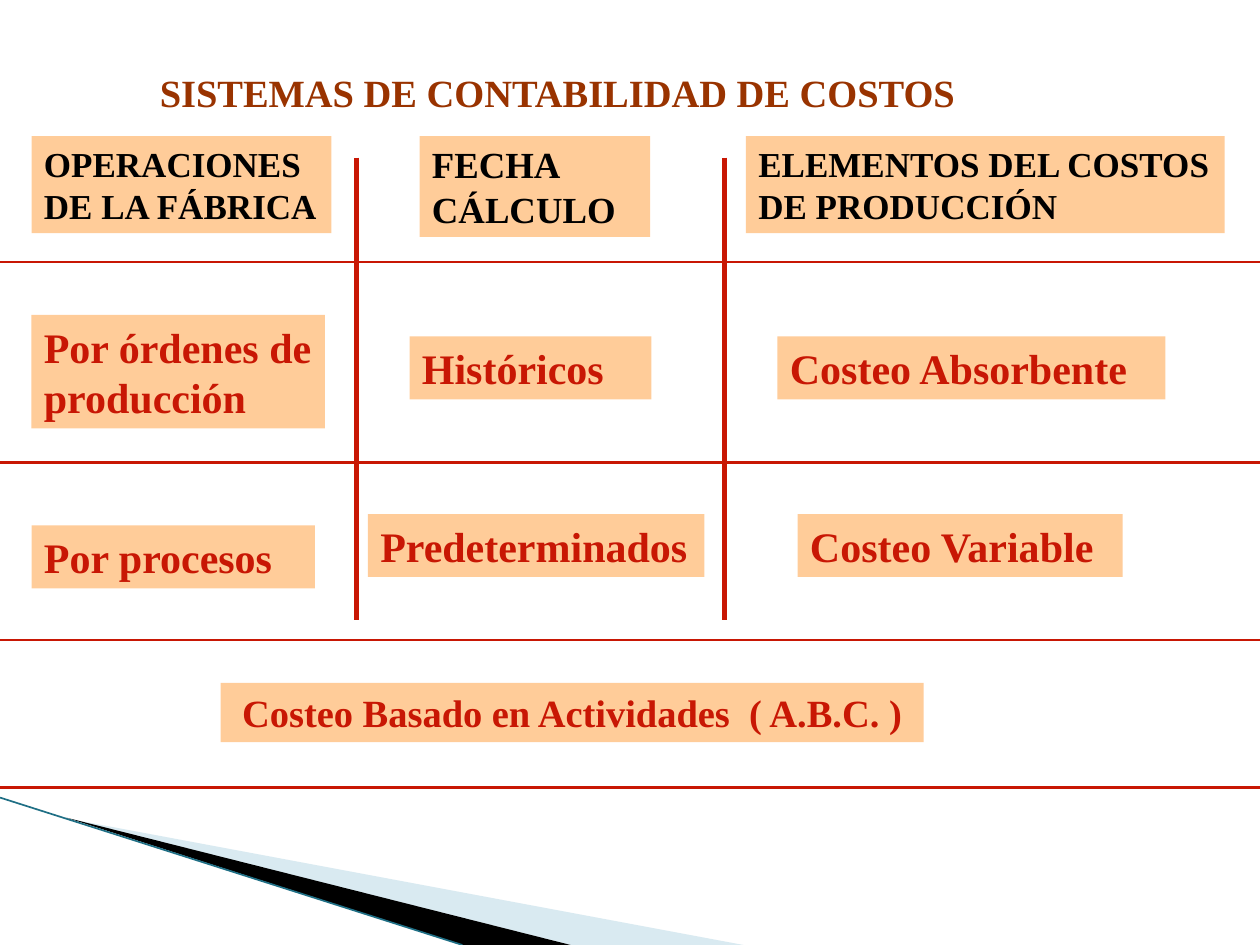
from lxml import etree
from pptx import Presentation
from pptx.dml.color import RGBColor
from pptx.enum.shapes import MSO_CONNECTOR, MSO_SHAPE
from pptx.enum.text import MSO_ANCHOR, PP_ALIGN
from pptx.oxml.ns import qn
from pptx.util import Inches, Pt

RECTANGLE = MSO_SHAPE.RECTANGLE
STRAIGHT = MSO_CONNECTOR.STRAIGHT
TOP = MSO_ANCHOR.TOP
LEFT, CENTER = PP_ALIGN.LEFT, PP_ALIGN.CENTER
FONT = "Times New Roman"
PEACH, RED, BLACK, BROWN = "FFCC99", "C81704", "000000", "993300"
PALE_BLUE, TEAL = "A0CBDC", "1F6F85"

HEADINGS = [
    (0.25, 2.38, 0.77, 20, ["OPERACIONES", "DE LA FÁBRICA"], True),
    (3.33, 1.83, 0.8, 21, ["FECHA CÁLCULO"], True),
    (5.92, 3.8, 0.77, 20, ["ELEMENTOS DEL COSTOS", "DE PRODUCCIÓN"], False),
]
SYSTEMS = [
    (0.25, 2.5, 2.33, 0.9, "Por órdenes de producción"),
    (0.25, 4.17, 2.25, 0.5, "Por procesos"),
    (3.25, 2.67, 1.92, 0.5, "Históricos"),
    (2.92, 4.08, 2.67, 0.5, "Predeterminados"),
    (6.17, 2.67, 3.08, 0.5, "Costeo Absorbente"),
    (6.33, 4.08, 2.58, 0.5, "Costeo Variable"),
]
COLUMN_RULES = [2.83, 5.75]
ROW_RULES = [2.08, 3.67, 5.08, 6.25]


def color(value):
    """Return the RGB colour of a hex string."""
    return RGBColor.from_string(value)


def write(box, lines, size, ink, align=LEFT, wrap=True):
    """Write bold lines in a box, one paragraph each."""
    frame = box.text_frame
    frame.word_wrap = wrap
    frame.vertical_anchor = TOP
    for index, line in enumerate(lines):
        para = frame.add_paragraph() if index else frame.paragraphs[0]
        para.alignment = align
        span = para.add_run()
        span.text = line
        formats = {"name": FONT, "size": Pt(size), "bold": True}
        for name, value in formats.items():
            setattr(span.font, name, value)
        span.font.color.rgb = color(ink)


def paint(shape, fill):
    """Give a shape a plain fill with no line or shadow."""
    shape.shadow.inherit = False
    shape.fill.solid()
    shape.fill.fore_color.rgb = color(fill)
    shape.line.fill.background()


def add_label(page, place, lines, size, ink, align=LEFT, wrap=True):
    """Add a peach rectangle with text."""
    box = page.shapes.add_shape(RECTANGLE, *map(Inches, place))
    paint(box, PEACH)
    write(box, lines, size, ink, align, wrap)


def add_rule(page, start, end, ink, width):
    """Add a straight line between two points."""
    rule = page.shapes.add_connector(STRAIGHT, *map(Inches, start + end))
    rule.line.color.rgb = color(ink)
    rule.line.width = Pt(width)
    etree.SubElement(rule._element.spPr, qn("a:effectLst"))


def add_wedge(page, points, fill, opacity=100):
    """Add a filled polygon with the given opacity in percent."""
    corners = [(Inches(x), Inches(y)) for x, y in points]
    builder = page.shapes.build_freeform(*corners[0])
    builder.add_line_segments(corners[1:], close=True)
    wedge = builder.convert_to_shape()
    paint(wedge, fill)
    if opacity < 100:
        tone = wedge._element.spPr.find(qn("a:solidFill"))[0]
        etree.SubElement(tone, qn("a:alpha"), val=str(opacity * 1000))


def main():
    """Build the slide and save it."""
    deck = Presentation()
    deck.slide_width, deck.slide_height = Inches(10), Inches(7.5)
    page = deck.slides.add_slide(deck.slide_layouts[6])

    add_wedge(page, [(0.55, 6.5), (5.9, 7.5), (4.53, 7.5)], PALE_BLUE, 40)
    add_wedge(page, [(0.53, 6.49), (4.53, 7.5), (3.67, 7.5)], BLACK)
    add_rule(page, (0, 6.33), (3.67, 7.5), TEAL, 0.95)

    title = page.shapes.add_textbox(*map(Inches, (1.17, 0.5, 6.54, 0.47)))
    write(title, ["SISTEMAS DE CONTABILIDAD DE COSTOS"], 22, BROWN, wrap=False)

    for left, width, height, size, lines, wrap in HEADINGS:
        place = (left, 1.08, width, height)
        add_label(page, place, lines, size, BLACK, wrap=wrap)
    for *place, name in SYSTEMS:
        add_label(page, place, [name], 24, RED)
    for x in COLUMN_RULES:
        add_rule(page, (x, 1.25), (x, 4.92), RED, 3)
    for y in ROW_RULES:
        add_rule(page, (0, y), (10, y), RED, 1.5)
    add_label(page, (1.75, 5.42, 5.58, 0.47),
              ["Costeo Basado en Actividades  ( A.B.C. )"], 22, RED, CENTER)

    deck.save("out.pptx")


if __name__ == "__main__":
    main()
